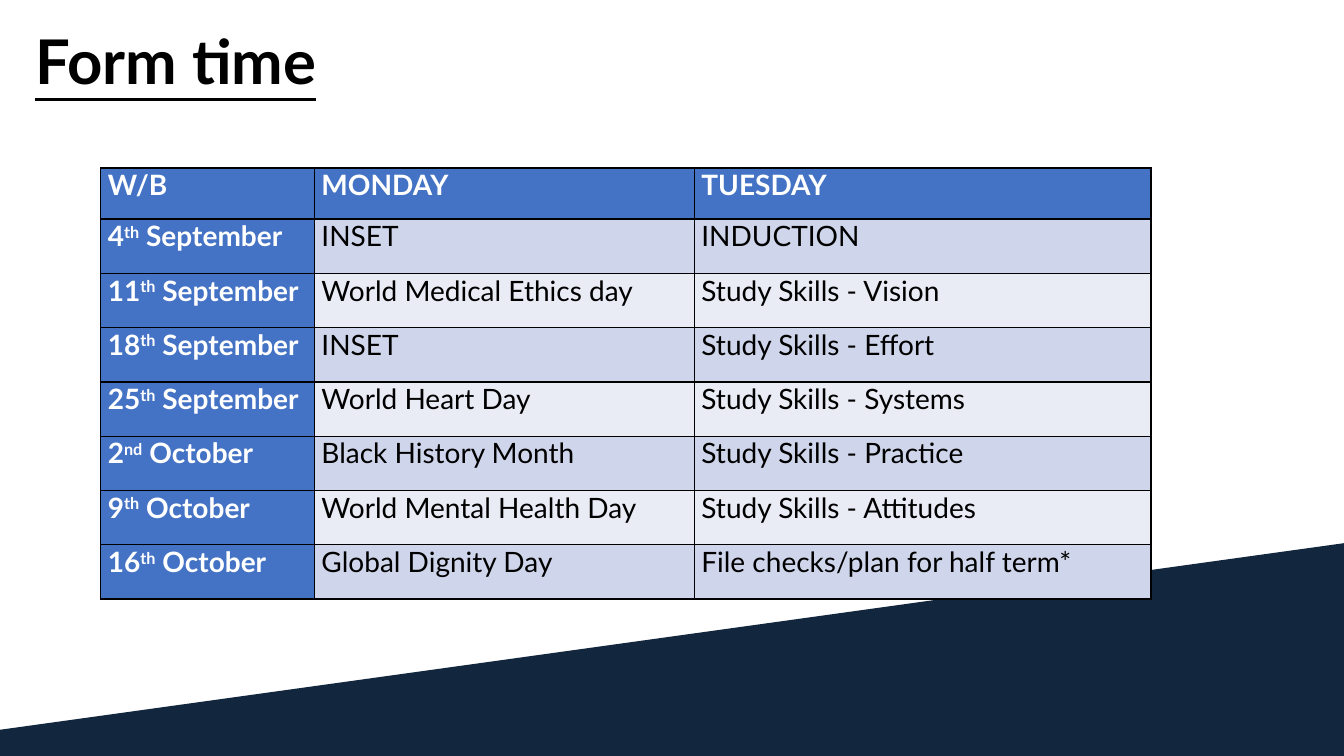
from lxml import etree
from pptx import Presentation
from pptx.dml.color import RGBColor
from pptx.enum.text import MSO_ANCHOR
from pptx.oxml.ns import qn
from pptx.util import Pt

MIDDLE = MSO_ANCHOR.MIDDLE
WIDTH, HEIGHT = 960, 540
COLORS = {
    "navy": "12263D",
    "blue": "4472C4",
    "band_dark": "CFD5EA",
    "band_light": "E9EBF5",
    "black": "000000",
    "white": "FFFFFF",
}
TITLE_FONT = {"size": Pt(44), "bold": True, "underline": True}
HEADING_FONT = {"size": Pt(20), "bold": True}
BODY_FONT = {"size": Pt(20), "bold": False}
CELL_MARGINS = {
    "margin_left": Pt(5.04),
    "margin_right": Pt(5.04),
    "margin_top": 0,
    "margin_bottom": 0,
}
HEADINGS = ("W/B", "MONDAY", "TUESDAY")
WEEKS = [
    (("4", "th", " September"), "INSET", "INDUCTION"),
    (("11", "th", " September"), "World Medical Ethics day", "Study Skills - Vision"),
    (("18", "th", " September"), "INSET", "Study Skills - Effort"),
    (("25", "th", " September"), "World Heart Day", "Study Skills - Systems"),
    (("2", "nd", " October"), "Black History Month", "Study Skills - Practice"),
    (("9", "th", " October"), "World Mental Health Day", "Study Skills - Attitudes"),
    (("16", "th", " October"), "Global Dignity Day", "File checks/plan for half term*"),
]
COLUMN_WIDTHS = (152.6, 271.4, 326.2)
HEADER_HEIGHT, WEEK_HEIGHT = 36.5, 38.8


def apply(target, values):
    for name, value in values.items():
        setattr(target, name, value)


class FormTimeSlide:
    font_name = "Lato"

    def __init__(self, slide):
        self.slide = slide

    def color(self, name):
        return RGBColor.from_string(COLORS[name])

    def paint(self, fill, color):
        fill.solid()
        fill.fore_color.rgb = self.color(color)

    def add_text(self, paragraph, text, color, font_values):
        run = paragraph.add_run()
        run.text = text
        apply(run.font, {"name": self.font_name, **font_values})
        run.font.color.rgb = self.color(color)
        return run

    def wedge(self, corners, color):
        points = [(Pt(x), Pt(y)) for x, y in corners]
        builder = self.slide.shapes.build_freeform(*points[0])
        builder.add_line_segments(points[1:])
        wedge = builder.convert_to_shape()
        wedge.shadow.inherit = False
        self.paint(wedge.fill, color)
        wedge.line.fill.background()

    def title(self, text, left, top, width, height):
        box = self.slide.shapes.add_textbox(Pt(left), Pt(top), Pt(width), Pt(height))
        apply(box.text_frame, {"word_wrap": True, "vertical_anchor": MIDDLE})
        heading = box.text_frame.paragraphs[0]
        heading.line_spacing = 0.9
        self.add_text(heading, text, "black", TITLE_FONT)

    def borders(self, cell):
        properties = cell._tc.get_or_add_tcPr()
        for side in ("a:lnL", "a:lnR", "a:lnT", "a:lnB"):
            line = etree.SubElement(properties, qn(side), w=str(Pt(1)))
            fill = etree.SubElement(line, qn("a:solidFill"))
            etree.SubElement(fill, qn("a:srgbClr"), val=COLORS["black"])

    def cell(self, cell, parts, fill, color, font_values):
        apply(cell, CELL_MARGINS)
        self.borders(cell)
        self.paint(cell.fill, fill)
        for index, part in enumerate(parts):
            run = self.add_text(cell.text_frame.paragraphs[0], part, color, font_values)
            if index == 1:
                run._r.get_or_add_rPr().set("baseline", "30000")

    def timetable(self, left, top):
        rows = [tuple((heading,) for heading in HEADINGS)]
        rows += [(date, (monday,), (tuesday,)) for date, monday, tuesday in WEEKS]
        heights = [HEADER_HEIGHT] + [WEEK_HEIGHT] * len(WEEKS)
        frame = self.slide.shapes.add_table(
            len(rows), len(HEADINGS), Pt(left), Pt(top),
            Pt(sum(COLUMN_WIDTHS)), Pt(sum(heights)))
        table = frame.table
        apply(table, {"first_col": True, "horz_banding": False})
        for column, width in zip(table.columns, COLUMN_WIDTHS):
            column.width = Pt(width)
        for row, height in zip(table.rows, heights):
            row.height = Pt(height)
        for r, row in enumerate(rows):
            band = "band_dark" if r % 2 else "band_light"
            for c, parts in enumerate(row):
                if r == 0 or c == 0:
                    look = ("blue", "white", HEADING_FONT)
                else:
                    look = (band, "black", BODY_FONT)
                self.cell(table.cell(r, c), parts, *look)


def main():
    deck = Presentation()
    apply(deck, {"slide_width": Pt(WIDTH), "slide_height": Pt(HEIGHT)})
    page = FormTimeSlide(deck.slides.add_slide(deck.slide_layouts[6]))
    page.wedge([(0, 521.3), (WIDTH, 388), (WIDTH, HEIGHT), (0, HEIGHT)], "navy")
    page.title("Form time", 18, 5.8, 800, 80)
    page.timetable(72, 120)
    deck.save("out.pptx")


if __name__ == "__main__":
    main()
